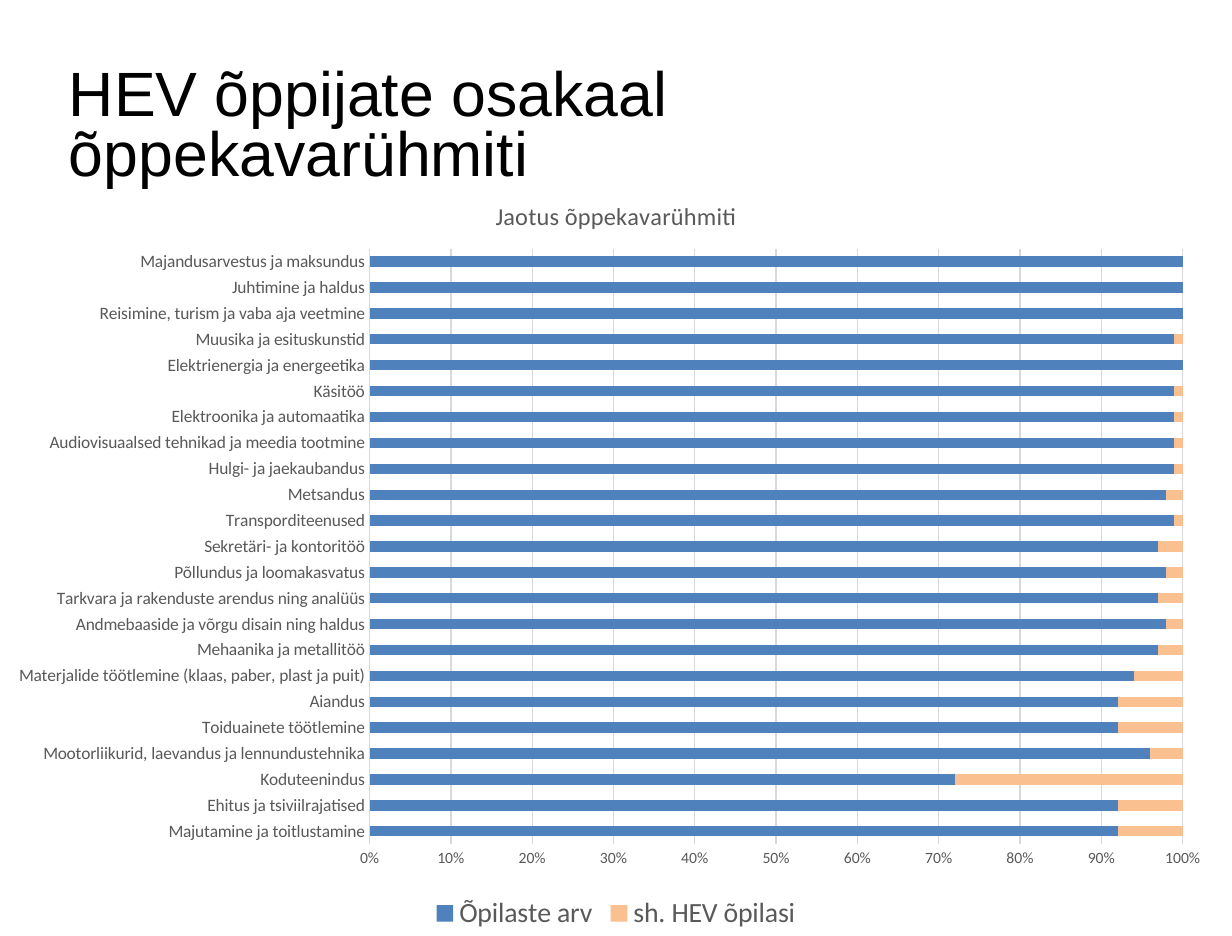
from pptx import Presentation
from pptx.chart.data import CategoryChartData
from pptx.dml.color import RGBColor
from pptx.enum.chart import XL_CHART_TYPE, XL_LEGEND_POSITION, XL_TICK_MARK
from pptx.enum.text import MSO_ANCHOR, MSO_AUTO_SIZE, PP_ALIGN
from pptx.oxml import parse_xml
from pptx.util import Cm, Pt

STACKED_BARS = XL_CHART_TYPE.BAR_STACKED_100
BOTTOM = XL_LEGEND_POSITION.BOTTOM
NO_TICK = XL_TICK_MARK.NONE
MIDDLE = MSO_ANCHOR.MIDDLE
LEFT = PP_ALIGN.LEFT
NO_AUTOFIT = MSO_AUTO_SIZE.NONE

BLACK = RGBColor(0x00, 0x00, 0x00)
GREY = RGBColor(0x59, 0x59, 0x59)
LIGHT_GREY = RGBColor(0xD9, 0xD9, 0xD9)
BLUE = RGBColor(0x4F, 0x81, 0xBD)
ORANGE = RGBColor(0xFA, 0xC0, 0x90)

CHART_NS = "http://schemas.openxmlformats.org/drawingml/2006/chart"

# Study field and its share of all learners, in percent
LEARNER_SHARES = {
    "Majutamine ja toitlustamine": 92,
    "Ehitus ja tsiviilrajatised": 92,
    "Koduteenindus": 72,
    "Mootorliikurid, laevandus ja lennundustehnika": 96,
    "Toiduainete töötlemine": 92,
    "Aiandus": 92,
    "Materjalide töötlemine (klaas, paber, plast ja puit)": 94,
    "Mehaanika ja metallitöö": 97,
    "Andmebaaside ja võrgu disain ning haldus": 98,
    "Tarkvara ja rakenduste arendus ning analüüs": 97,
    "Põllundus ja loomakasvatus": 98,
    "Sekretäri- ja kontoritöö": 97,
    "Transporditeenused": 99,
    "Metsandus": 98,
    "Hulgi- ja jaekaubandus": 99,
    "Audiovisuaalsed tehnikad ja meedia tootmine": 99,
    "Elektroonika ja automaatika": 99,
    "Käsitöö": 99,
    "Elektrienergia ja energeetika": 100,
    "Muusika ja esituskunstid": 99,
    "Reisimine, turism ja vaba aja veetmine": 100,
    "Juhtimine ja haldus": 100,
    "Majandusarvestus ja maksundus": 100,
}


def set_font(font, size, color=GREY, name="Calibri"):
    font.name = name
    font.size = Pt(size)
    font.bold = False
    font.color.rgb = color


def write(frame, text, *, size, color=GREY, font="Calibri", align=None, spacing=None):
    frame.text = text
    paragraph = frame.paragraphs[0]
    paragraph.alignment = align
    paragraph.line_spacing = spacing
    set_font(paragraph.runs[0].font, size, color, font)


def set_plot_area(chart, x, y, w, h):
    """Fix the inner plot area, in fractions of the chart."""
    old_layout = chart.plots[0]._element.getparent().find(f"{{{CHART_NS}}}layout")
    plot_area = chart.plots[0]._element.getparent()
    if old_layout is not None:
        plot_area.remove(old_layout)
    sizes = "".join(f'<c:{key} val="{value}"/>'
                    for key, value in zip("xywh", (x, y, w, h)))
    plot_area.insert(0, parse_xml(
        f'<c:layout xmlns:c="{CHART_NS}"><c:manualLayout>'
        '<c:layoutTarget val="inner"/><c:xMode val="edge"/><c:yMode val="edge"/>'
        f'{sizes}</c:manualLayout></c:layout>'))


class SlideBuilder:
    def __init__(self, presentation):
        self.slide = presentation.slides.add_slide(presentation.slide_layouts[5])

    def title(self, text, left, top, width, height):
        heading = self.slide.shapes.title
        heading.left, heading.top = Cm(left), Cm(top)
        heading.width, heading.height = Cm(width), Cm(height)
        frame = heading.text_frame
        frame.margin_left = frame.margin_right = 0
        frame.margin_top = frame.margin_bottom = 0
        frame.word_wrap = True
        frame.auto_size = NO_AUTOFIT
        frame.vertical_anchor = MIDDLE
        write(frame, text, size=36, color=BLACK, font="Arial", align=LEFT, spacing=0.8)

    def share_chart(self, heading, fields, series, left, top, width, height):
        """Add stacked bars; series maps each name to its values and colour."""
        data = CategoryChartData()
        data.categories = fields
        for name, (values, _) in series.items():
            data.add_series(name, values)
        chart = self.slide.shapes.add_chart(
            STACKED_BARS, Cm(left), Cm(top), Cm(width), Cm(height), data).chart
        set_font(chart.font, 10, BLACK)
        chart.has_title = True
        write(chart.chart_title.text_frame, heading, size=14)
        chart.chart_title.include_in_layout = False

        bars = chart.plots[0]
        bars.gap_width = 150
        bars.overlap = 100
        bars.vary_by_categories = False
        for bar_series, (_, color) in zip(bars.series, series.values()):
            bar_series.format.fill.solid()
            bar_series.format.fill.fore_color.rgb = color
        self.format_axes(chart.category_axis, chart.value_axis)

        chart.has_legend = True
        chart.legend.position = BOTTOM
        chart.legend.include_in_layout = False
        set_font(chart.legend.font, 16)
        set_plot_area(chart, 0.3, 0.1, 0.66, 0.78)

    def format_axes(self, field_axis, share_axis):
        for axis, size in ((field_axis, 10), (share_axis, 9)):
            axis.major_tick_mark = axis.minor_tick_mark = NO_TICK
            set_font(axis.tick_labels.font, size)
        field_axis.has_major_gridlines = False
        share_axis.has_major_gridlines = True
        for line in (field_axis.format.line, share_axis.major_gridlines.format.line):
            line.color.rgb = LIGHT_GREY
            line.width = Pt(0.75)
        share_axis.format.line.fill.background()
        share_axis.minimum_scale, share_axis.maximum_scale = 0, 1
        share_axis.major_unit = 0.1
        share_axis.tick_labels.number_format = "0%"
        share_axis.tick_labels.number_format_is_linked = False


def main():
    presentation = Presentation()
    presentation.slide_width, presentation.slide_height = Cm(25), Cm(19)
    builder = SlideBuilder(presentation)
    builder.title("HEV õppijate osakaal õppekavarühmiti", 1.4, 0.85, 20.9, 3.5)
    learners = list(LEARNER_SHARES.values())
    special_needs = [100 - share for share in learners]
    builder.share_chart(
        "Jaotus õppekavarühmiti", list(LEARNER_SHARES),
        {"Õpilaste arv": (learners, BLUE), "sh. HEV õpilasi": (special_needs, ORANGE)},
        0, 3.5, 25, 15.5)
    presentation.save("out.pptx")


if __name__ == "__main__":
    main()
